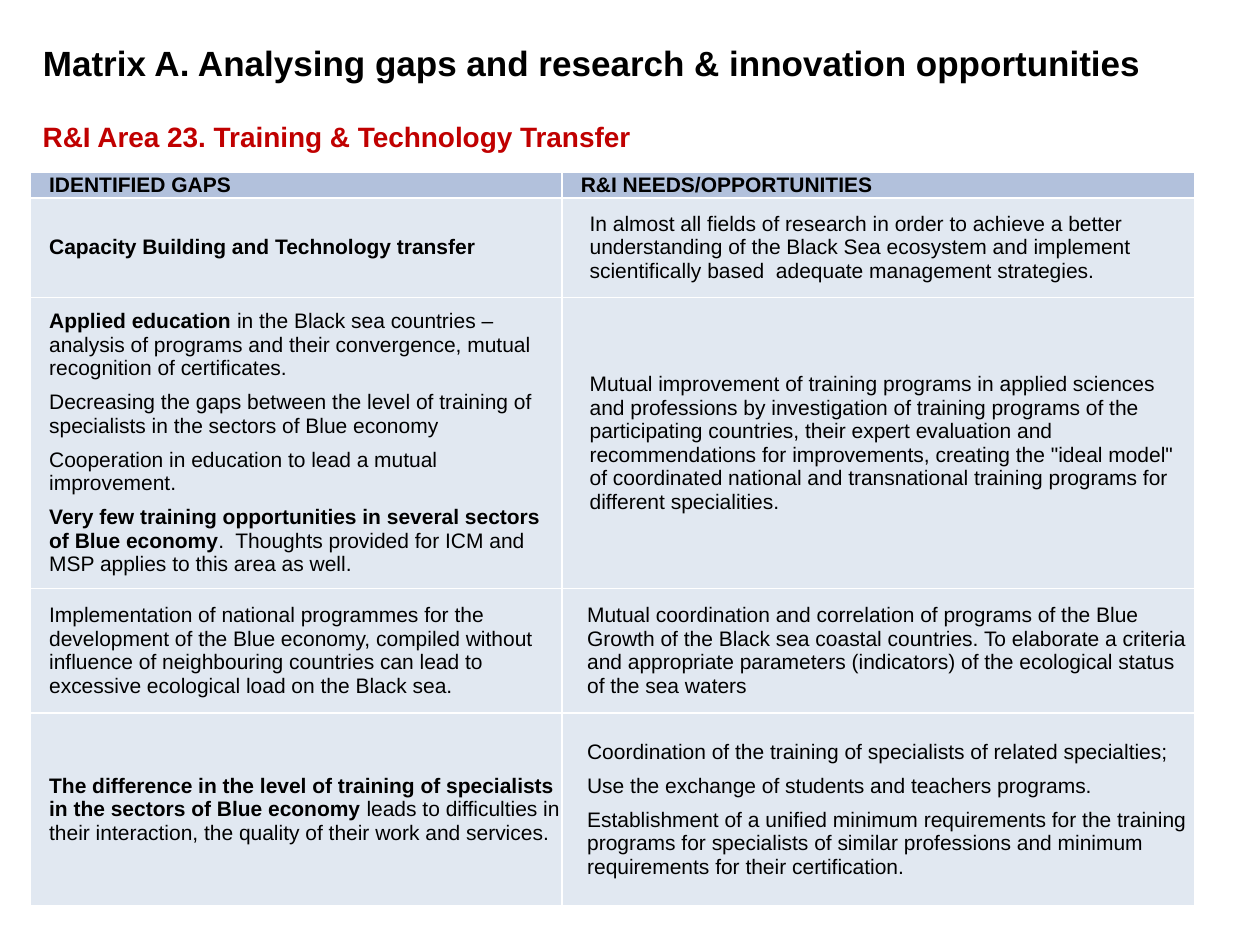
from dataclasses import dataclass

from lxml import etree
from pptx import Presentation
from pptx import util as u
from pptx.dml.color import RGBColor
from pptx.enum import text
from pptx.oxml.ns import qn


@dataclass(frozen=True)
class Theme:
    font: str = "Arial"
    ink: str = "000000"
    accent: str = "C00000"
    header_fill: str = "B2C1DC"
    body_fill: str = "E1E8F1"
    border: str = "FFFFFF"
    title_size: int = 20
    subtitle_size: int = 16
    table_size: int = 12


THEME = Theme()
LEFT = 0.24
COLUMN_WIDTHS = [4.22, 5.02]
ROW_HEIGHTS = [0.2, 0.79, 2.31, 0.99, 1.53]

# Each cell is a list of paragraphs; ** switches bold on and off
ROWS = [
    (["**IDENTIFIED GAPS**"], ["**R&I NEEDS/OPPORTUNITIES**"]),
    (["**Capacity Building and Technology transfer**"],
     ["In almost all fields of research in order to achieve a better understanding of the "
      "Black Sea ecosystem and implement scientifically based  adequate management strategies."]),
    (["**Applied education **in the Black sea countries – analysis of programs and their "
      "convergence, mutual recognition of certificates.",
      "Decreasing the gaps between the level of training of specialists in the sectors of "
      "Blue economy",
      "Cooperation in education to lead a mutual improvement.",
      "**Very few training opportunities in several sectors of Blue economy**.  Thoughts "
      "provided for ICM and MSP applies to this area as well."],
     ["Mutual improvement of training programs in applied sciences and professions by "
      "investigation of training programs of the participating countries, their expert "
      "evaluation and recommendations for improvements, creating the \"ideal model\" of "
      "coordinated national and transnational training programs for different specialities."]),
    (["Implementation of national programmes for the development of the Blue economy, compiled "
      "without influence of neighbouring countries can lead to excessive ecological load on "
      "the Black sea."],
     ["Mutual coordination and correlation of programs of the Blue Growth of the Black sea "
      "coastal countries. To elaborate a criteria and appropriate parameters (indicators) of "
      "the ecological status of the sea waters"]),
    (["**The difference in the level of training of specialists in the sectors of Blue economy "
      "**leads to difficulties in their interaction, the quality of their work and services."],
     ["Coordination of the training of specialists of related specialties;",
      "Use the exchange of students and teachers programs.",
      "Establishment of a unified minimum requirements for the training programs for "
      "specialists of similar professions and minimum requirements for their certification."]),
]

# Second-column layout by row: side inset of the cell, indent of its paragraphs
NEEDS_LAYOUT = [(0, 0.15), (0.07, 0.15), (0.07, 0.15), (0, 0.2), (0, 0.2)]


def style_font(font, size, color, bold):
    font.name = THEME.font
    font.size = u.Pt(size)
    font.bold = bold
    font.color.rgb = RGBColor.from_string(color)


def fill_heading(shape, wording, size, color):
    frame = shape.text_frame
    frame.text = wording
    paragraph = frame.paragraphs[0]
    paragraph.alignment = text.PP_ALIGN.LEFT
    style_font(paragraph.runs[0].font, size, color, True)
    return frame


def add_title(slide, wording):
    title = slide.shapes.title
    title.left, title.top = u.Inches(LEFT), u.Inches(0.2)
    title.width, title.height = u.Inches(9.12), u.Inches(0.59)
    frame = fill_heading(title, wording, THEME.title_size, THEME.ink)
    frame.vertical_anchor = text.MSO_ANCHOR.MIDDLE
    frame.auto_size = text.MSO_AUTO_SIZE.NONE


def add_subtitle(slide, wording):
    box = slide.shapes.add_textbox(
        u.Inches(LEFT), u.Inches(0.9), u.Inches(4.91), u.Inches(0.37))
    frame = fill_heading(box, wording, THEME.subtitle_size, THEME.accent)
    frame.word_wrap = False
    frame.auto_size = text.MSO_AUTO_SIZE.SHAPE_TO_FIT_TEXT


def set_borders(cell):
    properties = cell._tc.get_or_add_tcPr()
    for side in ("a:lnL", "a:lnR", "a:lnT", "a:lnB"):
        line = etree.SubElement(properties, qn(side), w=str(u.Pt(1)))
        fill = etree.SubElement(line, qn("a:solidFill"))
        etree.SubElement(fill, qn("a:srgbClr"), val=THEME.border)


def write_paragraph(paragraph, marked_text, indent):
    paragraph.space_before = paragraph.space_after = u.Pt(3)
    paragraph._p.get_or_add_pPr().set("marL", str(u.Inches(indent)))
    for index, part in enumerate(marked_text.split("**")):
        if part:
            run = paragraph.add_run()
            run.text = part
            style_font(run.font, THEME.table_size, THEME.ink, index % 2 == 1)


def fill_cell(cell, paragraphs, color, inset, indent):
    set_borders(cell)
    cell.fill.solid()
    cell.fill.fore_color.rgb = RGBColor.from_string(color)
    cell.vertical_anchor = text.MSO_ANCHOR.MIDDLE
    cell.margin_left = cell.margin_right = u.Inches(inset)
    cell.margin_top = cell.margin_bottom = 0
    frame = cell.text_frame
    for index, marked_text in enumerate(paragraphs):
        paragraph = frame.add_paragraph() if index else frame.paragraphs[0]
        write_paragraph(paragraph, marked_text, indent)


def add_matrix(slide):
    table = slide.shapes.add_table(
        len(ROWS), len(COLUMN_WIDTHS), u.Inches(LEFT), u.Inches(1.37),
        u.Inches(sum(COLUMN_WIDTHS)), u.Inches(sum(ROW_HEIGHTS))).table
    for column, width in zip(table.columns, COLUMN_WIDTHS):
        column.width = u.Inches(width)
    for index, (gaps, needs) in enumerate(ROWS):
        table.rows[index].height = u.Inches(ROW_HEIGHTS[index])
        color = THEME.body_fill if index else THEME.header_fill
        fill_cell(table.cell(index, 0), gaps, color, 0, 0.15)
        fill_cell(table.cell(index, 1), needs, color, *NEEDS_LAYOUT[index])


def main():
    presentation = Presentation()
    presentation.slide_width, presentation.slide_height = u.Inches(10), u.Inches(7.5)
    slide = presentation.slides.add_slide(presentation.slide_layouts.get_by_name("Title Only"))

    # Headings
    add_title(slide, "Matrix A. Analysing gaps and research & innovation opportunities")
    add_subtitle(slide, "R&I Area 23. Training & Technology Transfer")

    # Gaps and needs table
    add_matrix(slide)

    presentation.save("out.pptx")


if __name__ == "__main__":
    main()
